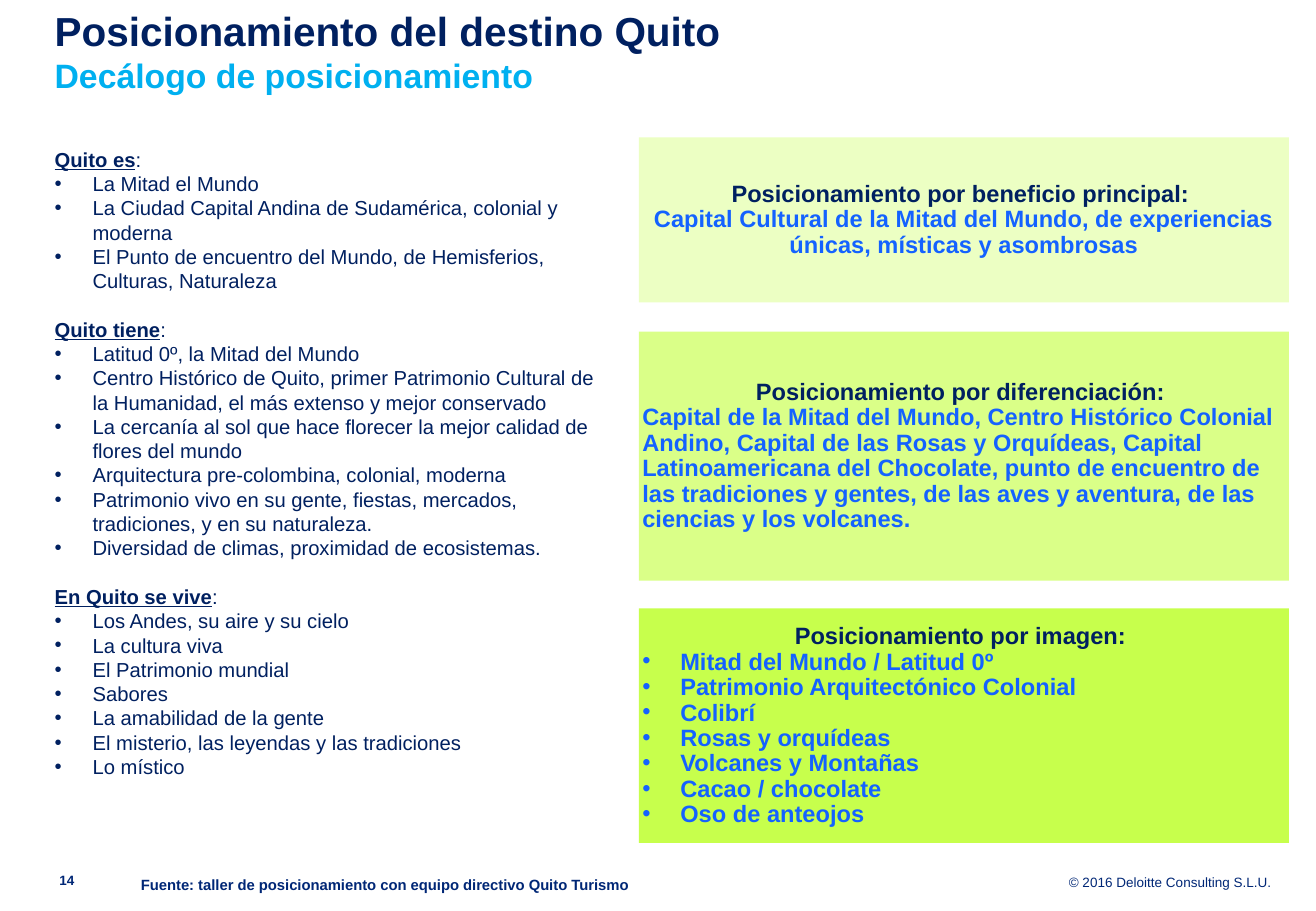
import pptx
import pptx.util
import pptx.dml.color
import pptx.enum.shapes
import pptx.enum.text
import lxml.etree

Pt = pptx.util.Pt
RGB = pptx.dml.color.RGBColor
ALIGN = pptx.enum.text.PP_ALIGN
ANCHOR = pptx.enum.text.MSO_ANCHOR

NAVY = RGB(0x00, 0x20, 0x60)
SKY = RGB(0x00, 0xB0, 0xF0)
BLUE = RGB(0x14, 0x62, 0xFF)
INK = RGB(0x00, 0x27, 0x76)
PALE = RGB(0xEC, 0xFF, 0xC3)
LIME = RGB(0xDA, 0xFF, 0x88)
BRIGHT = RGB(0xC7, 0xFF, 0x4C)

INDENT = Pt(22.5)
NS = "{http://schemas.openxmlformats.org/drawingml/2006/main}"

deck = pptx.Presentation()
deck.slide_width, deck.slide_height = Pt(780), Pt(540)
slide = deck.slides.add_slide(deck.slide_layouts[6])


def set_frame(shape, inset=0, anchor=ANCHOR.TOP):
    frame = shape.text_frame
    frame.word_wrap = True
    frame.vertical_anchor = anchor
    frame.margin_left = frame.margin_right = Pt(inset)
    frame.margin_top = frame.margin_bottom = Pt(inset)
    return frame


def add_text(frame, text, size=12, color=NAVY, bold=False, line=None,
             before=0, align=ALIGN.LEFT, bullet=False, under=False, tail=""):
    para = frame.paragraphs[0]
    if para.runs:
        para = frame.add_paragraph()
    para.alignment = align
    para.space_before = Pt(before)
    if line:
        para.line_spacing = Pt(line)
    if bullet:
        props = para._p.get_or_add_pPr()
        props.set("marL", str(INDENT))
        props.set("indent", str(-INDENT))
        lxml.etree.SubElement(props, NS + "buFont", typeface="Arial")
        lxml.etree.SubElement(props, NS + "buChar", char="•")
    para.font.size = Pt(size)
    para.font.name = "Arial"
    for part, strong in ((text, True), (tail, False)):
        if part:
            run = para.add_run()
            run.text = part
            run.font.name = "Arial"
            run.font.size = Pt(size)
            run.font.color.rgb = color
            run.font.bold = bold and strong
            run.font.underline = under and strong


# Title
box = slide.shapes.add_textbox(Pt(32.4), Pt(3.6), Pt(726), Pt(50))
frame = set_frame(box)
add_text(frame, "Posicionamiento del destino Quito", size=24, bold=True, line=28.8)
add_text(frame, "Decálogo de posicionamiento", size=20, color=SKY, bold=True, line=24)

# Left column: three headed lists
lists = [
    ("Quito es", [
        "La Mitad el Mundo",
        "La Ciudad Capital Andina de Sudamérica, colonial y moderna",
        "El Punto de encuentro del Mundo, de Hemisferios, Culturas, Naturaleza",
    ]),
    ("Quito tiene", [
        "Latitud 0º, la Mitad del Mundo",
        "Centro Histórico de Quito, primer Patrimonio Cultural de la Humanidad, "
        "el más extenso y mejor conservado",
        "La cercanía al sol que hace florecer la mejor calidad de flores del mundo",
        "Arquitectura pre-colombina, colonial, moderna",
        "Patrimonio vivo en su gente, fiestas, mercados, tradiciones, y en su naturaleza.",
        "Diversidad de climas, proximidad de ecosistemas.",
    ]),
    ("En Quito se vive", [
        "Los Andes, su aire y su cielo",
        "La cultura viva",
        "El Patrimonio mundial",
        "Sabores",
        "La amabilidad de la gente",
        "El misterio, las leyendas y las tradiciones",
        "Lo místico",
    ]),
]
box = slide.shapes.add_textbox(Pt(32.4), Pt(87.1), Pt(323.3), Pt(421))
frame = set_frame(box)
for order, (head, items) in enumerate(lists):
    add_text(frame, head, bold=True, under=True, tail=":", line=14.4,
             before=14.4 if order else 0)
    for item in items:
        add_text(frame, item, line=14.4, bullet=True)

# Right column: three panels
panels = [
    (81.4, 97.9, PALE, "Posicionamiento por beneficio principal: ", ALIGN.CENTER, False, [
        "Capital Cultural de la Mitad del Mundo, de experiencias únicas, "
        "místicas y asombrosas",
    ]),
    (196.6, 147.6, LIME, "Posicionamiento por diferenciación: ", ALIGN.LEFT, False, [
        "Capital de la Mitad del Mundo, Centro Histórico Colonial Andino, "
        "Capital de las Rosas y Orquídeas, Capital Latinoamericana del Chocolate, "
        "punto de encuentro de las tradiciones y gentes, de las aves y aventura, "
        "de las ciencias y los volcanes.",
    ]),
    (360.7, 139, BRIGHT, "Posicionamiento por imagen: ", ALIGN.LEFT, True, [
        "Mitad del Mundo / Latitud 0º",
        "Patrimonio Arquitectónico Colonial",
        "Colibrí",
        "Rosas y orquídeas",
        "Volcanes y Montañas",
        "Cacao / chocolate",
        "Oso de anteojos",
    ]),
]
for top, height, fill, head, align, bullet, items in panels:
    panel = slide.shapes.add_shape(pptx.enum.shapes.MSO_SHAPE.RECTANGLE,
                                   Pt(378.7), Pt(top), Pt(385.2), Pt(height))
    panel.shadow.inherit = False
    panel.fill.solid()
    panel.fill.fore_color.rgb = fill
    panel.line.fill.background()
    frame = set_frame(panel, inset=2, anchor=ANCHOR.MIDDLE)
    add_text(frame, head, size=14, bold=True, line=15.12, align=ALIGN.CENTER)
    for item in items:
        add_text(frame, item, size=14, color=BLUE, bold=True, line=15.12,
                 align=align, bullet=bullet)

# Footer: page number, source and copyright
notes = [
    (35.3, 516.2, 24.5, 11.5, "14",
     dict(size=8, bold=True, line=10.6)),
    (83.5, 519.1, 329, 10.8,
     "Fuente: taller de posicionamiento con equipo directivo Quito Turismo",
     dict(size=8.8, bold=True, line=10.6)),
    (613.4, 518.8, 140.4, 9, "© 2016 Deloitte Consulting S.L.U.",
     dict(size=8, align=ALIGN.RIGHT)),
]
for left, top, width, height, text, style in notes:
    box = slide.shapes.add_textbox(Pt(left), Pt(top), Pt(width), Pt(height))
    anchor = ANCHOR.BOTTOM if "align" in style else ANCHOR.TOP
    add_text(set_frame(box, anchor=anchor), text, color=INK, **style)

deck.save("out.pptx")
